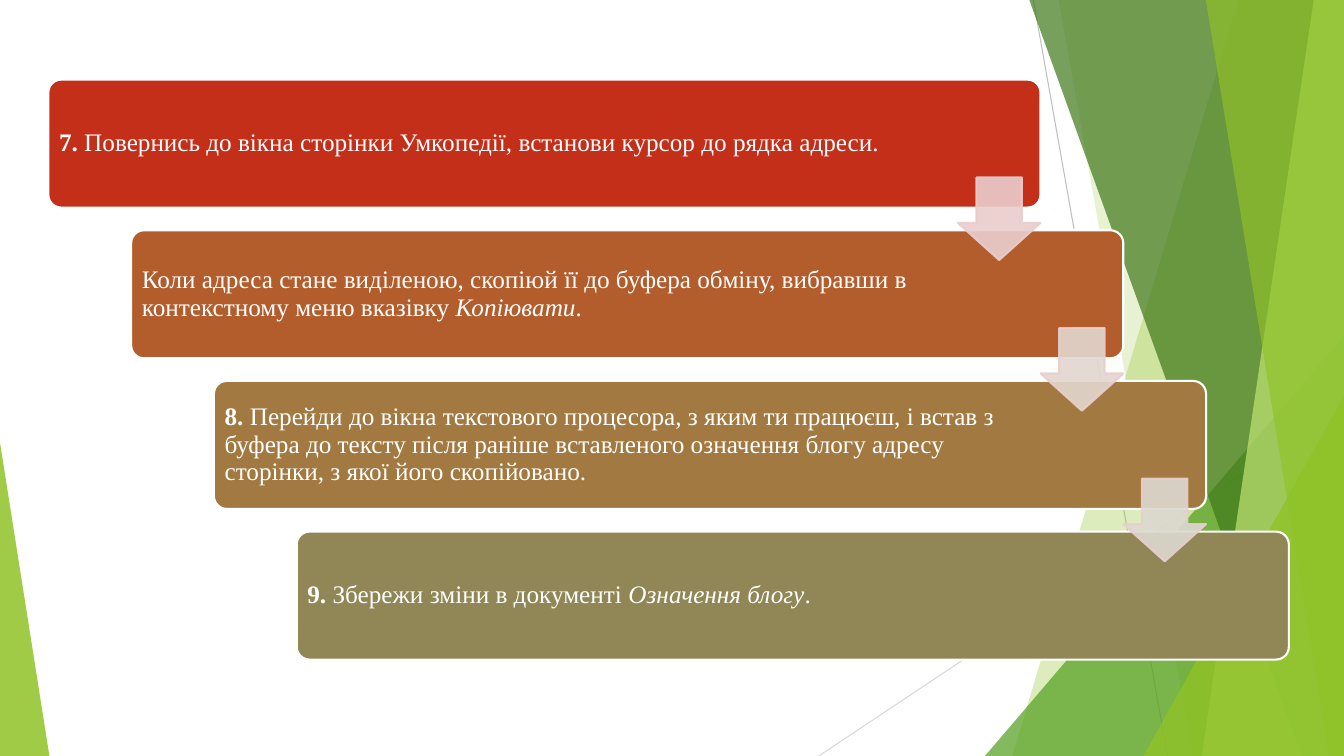
from dataclasses import dataclass

from lxml import etree
from pptx import Presentation
from pptx import util as u
from pptx.dml import color
from pptx.enum import shapes, text
from pptx.oxml import ns

SLIDE_WIDTH, SLIDE_HEIGHT = u.Inches(13.33), u.Inches(7.5)
FONT = "Times New Roman"
COLORS = {
    "white": "FFFFFF", "ray": "BFBFBF", "pale_ray": "D9D9D9",
    "lime": "90C226", "green": "54A021", "forest": "3F7819", "light_lime": "C0E474",
    "red": "C42F1A", "rust": "B35D2D", "ochre": "A27A41", "olive": "918655",
    "pink": "EACDCD", "beige": "E3D7CF", "stone": "DCD9D1",
}

# All lengths below are percentages of the slide's width or height.
CARD_LEFT, CARD_TOP = 3.6, 10.53
CARD_WIDTH, CARD_HEIGHT = 73.82, 16.93
STEP_X, STEP_Y = 6.16, 19.93
LABEL_INSET_X, LABEL_INSET_Y = 0.27, 0.5
ARROW_WIDTH, ARROW_HEIGHT = 6.15, 10.93
ARROW_TOP = 23.47


@dataclass(frozen=True)
class Ray:
    start: tuple[float, float]
    end: tuple[float, float]
    color: str


@dataclass(frozen=True)
class Facet:
    """A slanted band from its left edge to the right side of the slide."""
    top_x: float
    bottom_x: float
    color: str
    opacity: int


@dataclass(frozen=True)
class Corner:
    """A right triangle standing on the bottom of the slide."""
    left: float
    top: float
    width: float
    apex: int
    color: str
    opacity: int


@dataclass(frozen=True)
class Phrase:
    wording: str
    bold: bool = False
    italic: bool = False


@dataclass(frozen=True)
class Step:
    color: str
    label_width: float
    phrases: tuple[Phrase, ...]


RAYS = [
    Ray((76.89, 0), (86.87, 100), "ray"),
    Ray((100, 53.73), (60.92, 100), "pale_ray"),
]
DECORATION = [
    Facet(92.12, 75.32, "lime", 30),
    Facet(78.77, 88.75, "lime", 20),
    Corner(73.29, 44.4, 26.71, 1, "green", 72),
    Facet(76.59, 96.85, "forest", 70),
    Facet(97.75, 89.42, "light_lime", 70),
    Facet(89.72, 98.87, "lime", 65),
    Corner(85.07, 52.4, 14.93, 1, "lime", 80),
    Corner(0, 58.53, 3.68, 0, "lime", 85),
]
STEPS = [
    Step("red", 62.79, (
        Phrase("7. ", bold=True),
        Phrase("Повернись до вікна сторінки Умкопедії, встанови курсор до рядка адреси."),
    )),
    Step("rust", 60.92, (
        Phrase("Коли адреса стане виділеною, скопіюй її до буфера обміну, вибравши в "
               "контекстному меню вказівку "),
        Phrase("Копіювати", italic=True),
        Phrase("."),
    )),
    Step("ochre", 60.99, (
        Phrase("8. ", bold=True),
        Phrase("Перейди до вікна текстового процесора, з яким ти працюєш, і встав з\n"
               "буфера до тексту після раніше вставленого означення блогу адресу "
               "сторінки, з якої його скопійовано."),
    )),
    Step("olive", 60.92, (
        Phrase("9. ", bold=True),
        Phrase("Збережи зміни в документі "),
        Phrase("Означення блогу", italic=True),
        Phrase("."),
    )),
]
ARROW_COLORS = ["pink", "beige", "stone"]


def across(share: float) -> int:
    return round(SLIDE_WIDTH * share / 100)


def down(share: float) -> int:
    return round(SLIDE_HEIGHT * share / 100)


def box(left: float, top: float, width: float, height: float) -> tuple[int, ...]:
    return across(left), down(top), across(width), down(height)


def rgb(name: str) -> color.RGBColor:
    return color.RGBColor.from_string(COLORS[name])


def paint(shape, fill: str, opacity: int = 100, outline: str | None = None) -> None:
    shape.shadow.inherit = False
    shape.fill.solid()
    shape.fill.fore_color.rgb = rgb(fill)
    if outline:
        shape.line.color.rgb = rgb(outline)
        shape.line.width = u.Pt(1.5)
    else:
        shape.line.fill.background()
    if opacity < 100:
        for tint in shape._element.spPr.iter(ns.qn("a:srgbClr")):
            etree.SubElement(tint, ns.qn("a:alpha"), val=str(opacity * 1000))


def draw_ray(canvas, ray: Ray) -> None:
    line = canvas.add_connector(
        shapes.MSO_CONNECTOR.STRAIGHT,
        across(ray.start[0]), down(ray.start[1]), across(ray.end[0]), down(ray.end[1]))
    line.line.color.rgb = rgb(ray.color)
    line.line.width = u.Pt(0.75)
    etree.SubElement(line._element.spPr, ns.qn("a:effectLst"))


def draw_facet(canvas, facet: Facet) -> None:
    outline = canvas.build_freeform(across(facet.top_x), 0)
    outline.add_line_segments([
        (SLIDE_WIDTH, 0), (SLIDE_WIDTH, SLIDE_HEIGHT), (across(facet.bottom_x), SLIDE_HEIGHT)])
    paint(outline.convert_to_shape(), facet.color, facet.opacity)


def draw_corner(canvas, corner: Corner) -> None:
    triangle = canvas.add_shape(
        shapes.MSO_SHAPE.ISOSCELES_TRIANGLE,
        *box(corner.left, corner.top, corner.width, 100 - corner.top))
    triangle.adjustments[0] = corner.apex
    paint(triangle, corner.color, corner.opacity)


def write_phrase(paragraph, phrase: Phrase) -> None:
    for number, row in enumerate(phrase.wording.split("\n")):
        if number:
            paragraph.add_line_break()
        run = paragraph.add_run()
        run.text = row
        run.font.name, run.font.size = FONT, u.Pt(18)
        run.font.bold, run.font.italic = phrase.bold, phrase.italic
        run.font.color.rgb = rgb("white")


def draw_step(canvas, index: int, step: Step) -> None:
    left, top = CARD_LEFT + index * STEP_X, CARD_TOP + index * STEP_Y
    card = canvas.add_shape(
        shapes.MSO_SHAPE.ROUNDED_RECTANGLE, *box(left, top, CARD_WIDTH, CARD_HEIGHT))
    card.adjustments[0] = 0.1
    paint(card, step.color, outline="white")

    label = canvas.add_textbox(*box(
        left + LABEL_INSET_X, top + LABEL_INSET_Y,
        step.label_width, CARD_HEIGHT - 2 * LABEL_INSET_Y)).text_frame
    label.word_wrap = True
    label.vertical_anchor = text.MSO_ANCHOR.MIDDLE
    label.margin_left = label.margin_right = u.Inches(0.07)
    label.margin_top = label.margin_bottom = u.Inches(0.07)
    paragraph = label.paragraphs[0]
    paragraph.line_spacing = 0.9
    for phrase in step.phrases:
        write_phrase(paragraph, phrase)


def draw_arrow(canvas, index: int, fill: str) -> None:
    left = CARD_LEFT + CARD_WIDTH - ARROW_WIDTH + index * STEP_X
    arrow = canvas.add_shape(
        shapes.MSO_SHAPE.DOWN_ARROW,
        *box(left, ARROW_TOP + index * STEP_Y, ARROW_WIDTH, ARROW_HEIGHT))
    arrow.adjustments[0], arrow.adjustments[1] = 0.55, 0.45
    paint(arrow, fill, 90, outline="pink")


def main() -> None:
    deck = Presentation()
    deck.slide_width, deck.slide_height = SLIDE_WIDTH, SLIDE_HEIGHT
    canvas = deck.slides.add_slide(deck.slide_layouts[6]).shapes
    for ray in RAYS:
        draw_ray(canvas, ray)
    for part in DECORATION:
        if isinstance(part, Facet):
            draw_facet(canvas, part)
        else:
            draw_corner(canvas, part)
    for index, step in enumerate(STEPS):
        draw_step(canvas, index, step)
    for index, fill in enumerate(ARROW_COLORS):
        draw_arrow(canvas, index, fill)
    deck.save("out.pptx")


if __name__ == "__main__":
    main()
